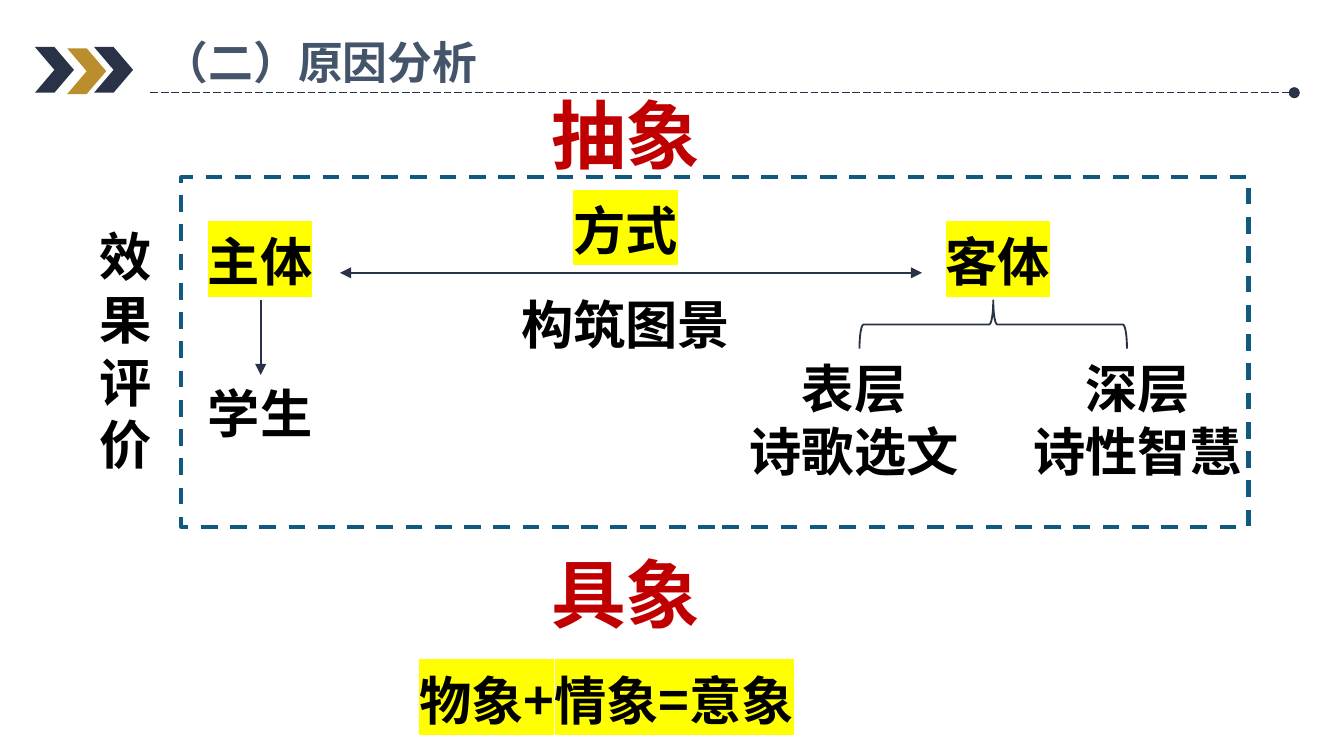
"""Build the cause analysis slide: abstract and concrete, subject, method and object."""
from lxml import etree
from pptx import Presentation
from pptx import util as u
from pptx.dml.color import RGBColor
from pptx.enum import dml, shapes, text
from pptx.oxml import ns

PX = 9144
SLIDE_WIDTH = 1000
FONT = "Noto Sans CJK SC"
COLORS = {"navy": "293247", "gold": "BA8D2D", "slate": "44546A", "red": "C00000",
          "black": "000000", "yellow": "FFFF00", "teal": "105A80"}

CHEVRONS = [(50, 36, "gold"), (70, 35, "navy"), (26, 35, "navy")]
CHEVRON_SIZE = (29, 34)
FRAME = (135, 132, 794, 260)
BRACE = (721, 142, 36, 199)

LINES = [
    {"ends": (112, 69, 963, 69), "width": 0.5, "dash": dml.MSO_LINE.LONG_DASH, "tail": "oval"},
    {"ends": (253, 203, 686, 203), "head": "triangle", "tail": "triangle"},
    {"ends": (194, 223, 194, 279), "tail": "triangle"},
]

TITLE = {"box": (112, 21, 266, 50), "lines": ["（二）原因分析"], "size": 24,
         "color": "slate", "align": text.PP_ALIGN.LEFT, "wrap": False}
HEADINGS = [
    {"box": (332, 61, 267, 77), "lines": ["抽象"], "size": 40, "color": "red"},
    {"box": (332, 403, 267, 77), "lines": ["具象"], "size": 40, "color": "red"},
]
LABELS = [
    {"box": (98, 166, 191, 57), "lines": ["主体"], "marked": 1},
    {"box": (98, 279, 191, 57), "lines": ["学生"]},
    {"box": (308, 119, 315, 145), "lines": ["方式", "构筑图景"], "marked": 1, "spacing": 1.5},
    {"box": (647, 166, 191, 57), "lines": ["客体"], "marked": 1},
    {"box": (478, 260, 315, 104), "lines": ["表层", "诗歌选文"]},
    {"box": (689, 260, 315, 104), "lines": ["深层", "诗性智慧"]},
    {"box": (268, 492, 367, 57), "lines": ["物象+情象=意象"], "marked": 1},
    {"box": (-2, 162, 191, 199), "lines": list("效果评价")},
]


def px(*values):
    return [u.Emu(v * PX) for v in values]


def rgb(name):
    return RGBColor.from_string(COLORS[name])


def add_run(p, words, size, color, marked):
    r = p.add_run()
    r.text = words
    r.font.size, r.font.bold = u.Pt(size), True
    r.font.color.rgb = rgb(color)
    r.font.name = FONT
    props = r.font._element
    etree.SubElement(props, ns.qn("a:ea"), typeface=FONT)
    if marked:
        mark = etree.Element(ns.qn("a:highlight"))
        etree.SubElement(mark, ns.qn("a:srgbClr"), val=COLORS["yellow"])
        props.find(ns.qn("a:solidFill")).addnext(mark)


def add_text(s, box, lines, size=28, color="black", align=text.PP_ALIGN.CENTER,
             wrap=True, marked=0, spacing=None):
    tf = s.shapes.add_textbox(*px(*box)).text_frame
    tf.word_wrap = wrap
    tf.auto_size = text.MSO_AUTO_SIZE.SHAPE_TO_FIT_TEXT
    for i, words in enumerate(lines):
        p = tf.add_paragraph() if i else tf.paragraphs[0]
        p.alignment, p.line_spacing = align, spacing
        add_run(p, words, size, color, i < marked)


def add_shape(s, kind, box, fill=None, line=None, width=1):
    sp = s.shapes.add_shape(kind, *px(*box))
    sp.shadow.inherit = False
    if fill:
        sp.fill.solid()
        sp.fill.fore_color.rgb = rgb(fill)
    else:
        sp.fill.background()
    if line:
        sp.line.color.rgb = rgb(line)
        sp.line.width = u.Pt(width)
    else:
        sp.line.fill.background()
    return sp


def add_line(s, ends, width=1, dash=None, head=None, tail=None):
    c = s.shapes.add_connector(shapes.MSO_CONNECTOR.STRAIGHT, *px(*ends))
    c.line.color.rgb = rgb("navy")
    c.line.width = u.Pt(width)
    if dash:
        c.line.dash_style = dash
    props = c._element.spPr
    for tag, kind in (("a:headEnd", head), ("a:tailEnd", tail)):
        if kind:
            etree.SubElement(props.find(ns.qn("a:ln")), ns.qn(tag), type=kind)
    etree.SubElement(props, ns.qn("a:effectLst"))


def main():
    prs = Presentation()
    prs.slide_width = u.Emu(SLIDE_WIDTH * PX)
    prs.slide_height = u.Emu(SLIDE_WIDTH * PX * 9 // 16)
    s = prs.slides.add_slide(prs.slide_layouts[6])
    for left, top, color in CHEVRONS:
        add_shape(s, shapes.MSO_SHAPE.CHEVRON, (left, top, *CHEVRON_SIZE), fill=color)
    for line in LINES:
        add_line(s, **line)
    for label in [TITLE, *HEADINGS, *LABELS]:
        add_text(s, **label)
    brace = add_shape(s, shapes.MSO_SHAPE.LEFT_BRACE, BRACE, line="navy")
    brace.rotation = 90
    frame = add_shape(s, shapes.MSO_SHAPE.RECTANGLE, FRAME, line="teal", width=2.25)
    frame.line.dash_style = dml.MSO_LINE.DASH
    prs.save("out.pptx")


if __name__ == "__main__":
    main()
